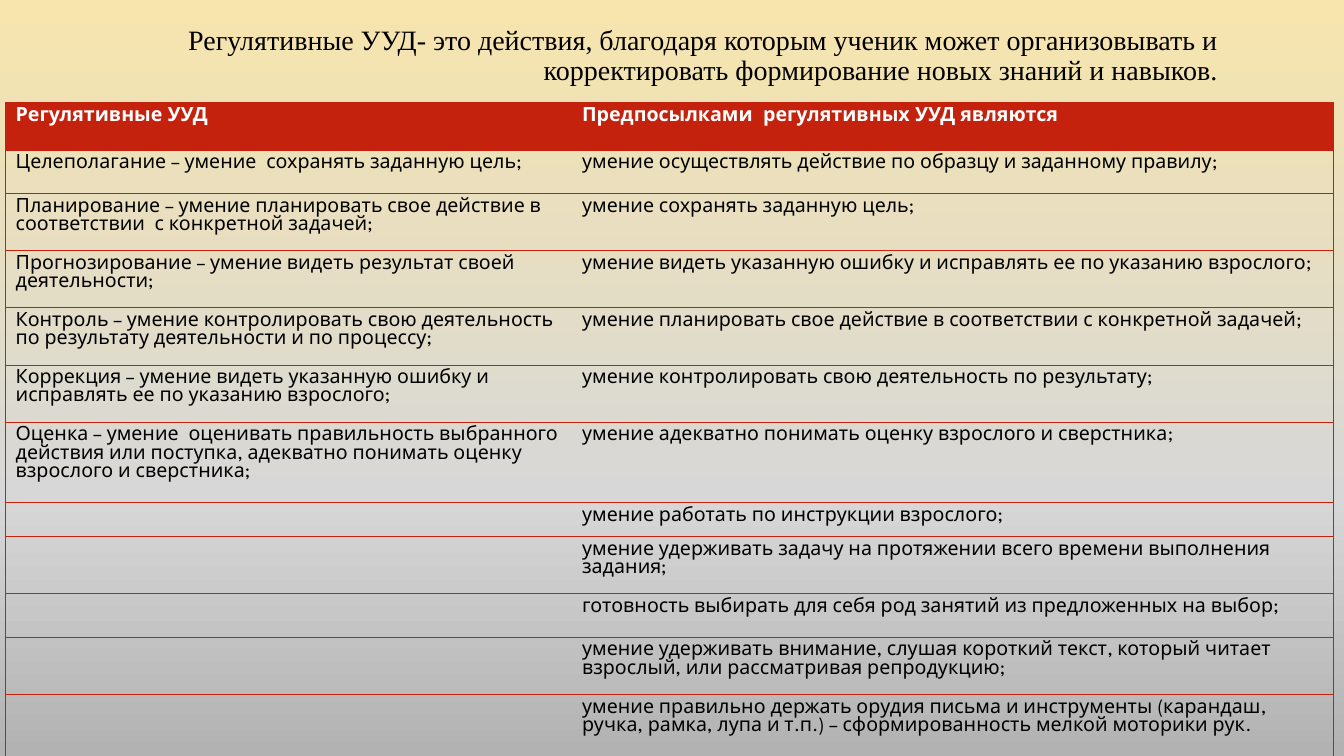
from copy import deepcopy
from lxml.etree import SubElement
from pptx import Presentation
from pptx.dml.color import RGBColor
from pptx.enum.text import MSO_ANCHOR, PP_ALIGN
from pptx.oxml.ns import qn
from pptx.util import Pt

TITLE = ("Регулятивные УУД- это действия, благодаря которым ученик может организовывать и "
         "корректировать формирование новых знаний и навыков.")
ROWS = [
    (34, "Регулятивные УУД", "Предпосылками  регулятивных УУД являются"),
    (31, "Целеполагание – умение  сохранять заданную цель;",
     "умение осуществлять действие по образцу и заданному правилу;"),
    (39.7, "Планирование – умение планировать свое действие в соответствии  с конкретной задачей;",
     "умение сохранять заданную цель;"),
    (39.7, "Прогнозирование – умение видеть результат своей деятельности;",
     "умение видеть указанную ошибку и исправлять ее по указанию взрослого;"),
    (39.7, "Контроль – умение контролировать свою деятельность по результату деятельности и по процессу;",
     "умение планировать свое действие в соответствии с конкретной задачей;"),
    (39.7, "Коррекция – умение видеть указанную ошибку и исправлять ее по указанию взрослого;",
     "умение контролировать свою деятельность по результату;"),
    (39.7, "Оценка – умение  оценивать правильность выбранного действия или поступка, "
     "адекватно понимать оценку взрослого и сверстника;",
     "умение адекватно понимать оценку взрослого и сверстника;"),
    (23, "", "умение работать по инструкции взрослого;"),
    (39.7, "", "умение удерживать задачу на протяжении всего времени выполнения задания;"),
    (31, "", "готовность выбирать для себя род занятий из предложенных на выбор;"),
    (39.7, "", "умение удерживать внимание, слушая короткий текст, который читает взрослый, "
     "или рассматривая репродукцию;"),
    (64, "", "умение правильно держать орудия письма и инструменты (карандаш, ручка, рамка, "
     "лупа и т.п.) – сформированность мелкой моторики рук."),
]
COLUMNS = [404.6, 544.2]
BACKGROUND = [(0, "F7E5AD"), (0.66, "D7D7D7"), (1, "B2B2B2")]
RED, WHITE, BLACK = "C4220D", "FFFFFF", "000000"
TABLE_FONT, TABLE_SIZE = "League Spartan", 14


def color(target, value):
    target.rgb = RGBColor.from_string(value)


def style(font, name, size, value, bold=False):
    font.name, font.size, font.bold = name, Pt(size), bold
    color(font.color, value)


def paint_background(s):
    fill = s.background.fill
    fill.gradient()
    fill.gradient_angle = 270
    stops = s._element.find(".//" + qn("a:gsLst"))
    stops.append(deepcopy(stops[0]))
    for stop, (position, value) in zip(fill.gradient_stops, BACKGROUND):
        stop.position = position
        color(stop.color, value)


def set_borders(cell, column):
    inner = "a:lnR" if column == 0 else "a:lnL"
    tcPr = cell._tc.get_or_add_tcPr()
    for i, tag in enumerate(("a:lnL", "a:lnR", "a:lnT", "a:lnB")):
        ln = tcPr.makeelement(qn(tag), {"w": str(Pt(0.75))})
        tcPr.insert(i, ln)
        if tag == inner:
            SubElement(ln, qn("a:noFill"))
        else:
            SubElement(SubElement(ln, qn("a:solidFill")), qn("a:srgbClr"), val=RED)


def fill_cell(cell, text, column, header):
    if header:
        cell.fill.solid()
        color(cell.fill.fore_color, RED)
    else:
        cell.fill.background()
    set_borders(cell, column)
    cell.text_frame.text = text
    p = cell.text_frame.paragraphs[0]
    for r in p.runs:
        style(r.font, TABLE_FONT, TABLE_SIZE, WHITE if header else BLACK, header)
    if not text:
        end = SubElement(p._p, qn("a:endParaRPr"), sz=str(TABLE_SIZE * 100))
        SubElement(end, qn("a:latin"), typeface=TABLE_FONT)


def add_title(s):
    tf = s.shapes.add_textbox(Pt(64), Pt(15), Pt(813), Pt(50.5)).text_frame
    tf.word_wrap = True
    tf.vertical_anchor = MSO_ANCHOR.MIDDLE
    tf.text = TITLE
    p = tf.paragraphs[0]
    p.alignment = PP_ALIGN.RIGHT
    p.line_spacing = 0.9
    style(p.runs[0].font, "Times New Roman", 20, BLACK)


def add_skills_table(s):
    height = sum(row[0] for row in ROWS)
    table = s.shapes.add_table(len(ROWS), len(COLUMNS), Pt(4), Pt(73.2),
                               Pt(sum(COLUMNS)), Pt(height)).table
    table.horz_banding = False
    for column, width in zip(table.columns, COLUMNS):
        column.width = Pt(width)
    for i, (row_height, *texts) in enumerate(ROWS):
        table.rows[i].height = Pt(row_height)
        for j, text in enumerate(texts):
            fill_cell(table.cell(i, j), text, j, i == 0)


def main():
    prs = Presentation()
    prs.slide_width, prs.slide_height = Pt(960), Pt(540)
    s = prs.slides.add_slide(prs.slide_layouts[6])
    paint_background(s)
    add_title(s)
    add_skills_table(s)
    prs.save("out.pptx")


if __name__ == "__main__":
    main()
